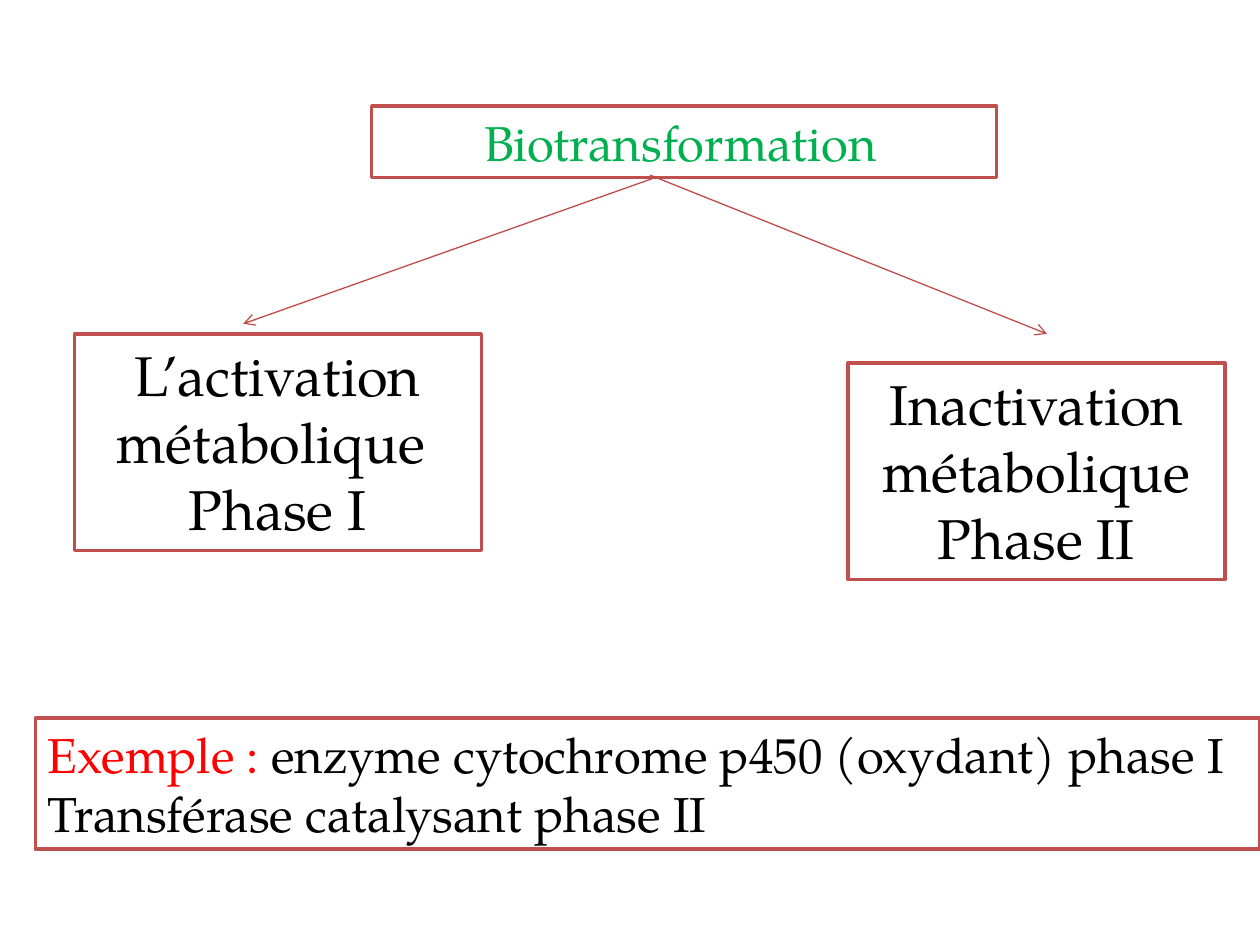
from lxml import etree
from pptx import Presentation
from pptx.dml.color import RGBColor
from pptx.enum import shapes, text
from pptx.oxml import ns
from pptx.util import Pt

WHITE = RGBColor(0xFF, 0xFF, 0xFF)
BLACK = RGBColor(0, 0, 0)
RED = RGBColor(0xFF, 0, 0)
GREEN = RGBColor(0, 0xB0, 0x50)
BORDER = RGBColor(0xC0, 0x50, 0x4D)
ARROW = RGBColor(0xBF, 0x4C, 0x48)
SERIF, SANS = "TeX Gyre Pagella", "Calibri"
CENTER, LEFT = text.PP_ALIGN.CENTER, text.PP_ALIGN.LEFT

# Boxes: (left, top, width, height), alignment, paragraphs of (text, size, font, colour)
BOXES = [
    ((212.4, 60.5, 357.1, 41), CENTER,
     [[("Biotransformation", 28, SERIF, GREEN), (" ", 18, SANS, BLACK)]]),
    ((42.5, 190.8, 232.6, 123.8), CENTER,
     [[("L’activation métabolique ", 32, SERIF, BLACK)],
      [("Phase I", 32, SERIF, BLACK)]]),
    ((484.6, 207.4, 215.3, 123.8), CENTER,
     [[("Inactivation métabolique", 32, SERIF, BLACK)],
      [("Phase II", 32, SERIF, BLACK)]]),
    ((20.2, 410.4, 699.8, 74.9), LEFT,
     [[("Exemple : ", 28, SERIF, RED),
       ("enzyme cytochrome p450 (oxydant) phase I", 28, SERIF, BLACK)],
      [("Transférase catalysant phase II", 28, SERIF, BLACK)]]),
]

# Arrows from the title to each phase: x1, y1, x2, y2
ARROWS = [(374.4, 101.5, 139, 185), (371.5, 100.1, 598.3, 190.8)]


def add_box(slide, frame, align, paragraphs):
    box = slide.shapes.add_shape(shapes.MSO_SHAPE.RECTANGLE, *map(Pt, frame))
    box.shadow.inherit = False
    box.fill.solid()
    box.fill.fore_color.rgb = WHITE
    box.line.color.rgb = BORDER
    box.line.width = Pt(2)
    body = box.text_frame
    body.word_wrap = True
    body.vertical_anchor = text.MSO_ANCHOR.TOP
    body.auto_size = text.MSO_AUTO_SIZE.SHAPE_TO_FIT_TEXT
    for index, spans in enumerate(paragraphs):
        para = body.add_paragraph() if index else body.paragraphs[0]
        para.alignment = align
        for words, size, font, color in spans:
            span = para.add_run()
            span.text = words
            span.font.size = Pt(size)
            span.font.name = font
            span.font.color.rgb = color


def add_arrow(slide, ends):
    arrow = slide.shapes.add_connector(shapes.MSO_CONNECTOR.STRAIGHT, *map(Pt, ends))
    arrow.line.color.rgb = ARROW
    arrow.line.width = Pt(0.75)
    etree.SubElement(arrow.line._get_or_add_ln(), ns.qn("a:tailEnd"), type="arrow")
    etree.SubElement(arrow._element.spPr, ns.qn("a:effectLst"))


def main():
    deck = Presentation()
    deck.slide_width, deck.slide_height = Pt(720), Pt(540)
    page = deck.slides.add_slide(deck.slide_layouts[6])
    for box in BOXES:
        add_box(page, *box)
    for ends in ARROWS:
        add_arrow(page, ends)
    deck.save("out.pptx")


if __name__ == "__main__":
    main()
